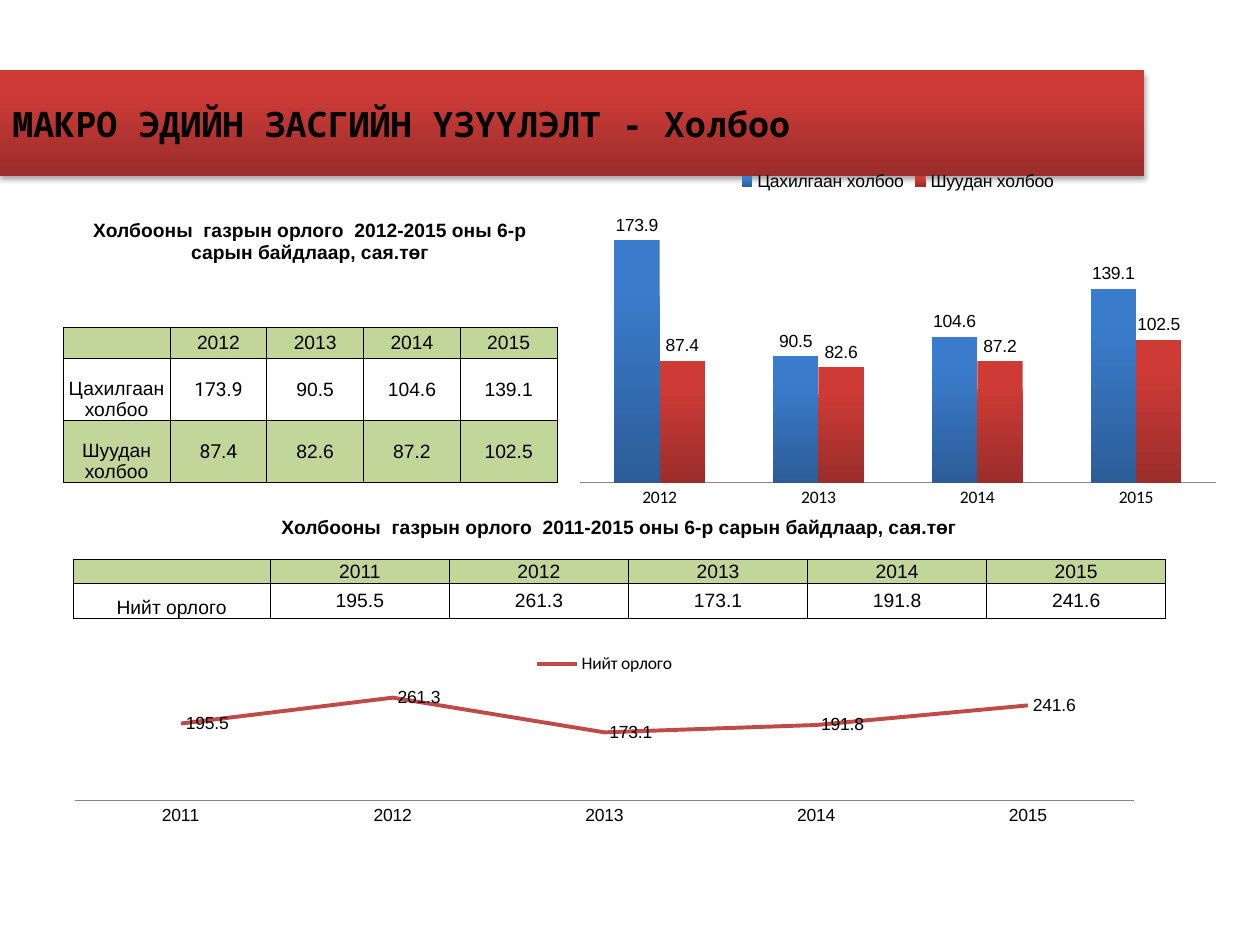
import pptx
import pptx.util
import pptx.chart.data
import pptx.dml.color
import pptx.enum.chart
import pptx.enum.shapes
import pptx.enum.text
import pptx.oxml
from lxml import etree
from pptx.oxml.ns import qn

Cm, Pt = pptx.util.Cm, pptx.util.Pt
Kind = pptx.enum.chart.XL_CHART_TYPE
Spot = pptx.enum.chart.XL_LABEL_POSITION
Anchor = pptx.enum.text.MSO_ANCHOR
Align = pptx.enum.text.PP_ALIGN

BLACK, GREEN, GREY = "000000", "C2D69A", "868686"
BLUES, REDS = ("3A7CCB", "2C5D98"), ("CE3B37", "9B2D2A")
PLAIN = "{2D5ABB26-0587-4C30-8999-92F81FD0307C}"
SIDES = ("lnL", "lnR", "lnT", "lnB")

YEARS = ["2011", "2012", "2013", "2014", "2015"]
SPLIT = {"Цахилгаан холбоо": [173.9, 90.5, 104.6, 139.1],
         "Шуудан холбоо": [87.4, 82.6, 87.2, 102.5]}
TOTAL = {"Нийт орлого": [195.5, 261.3, 173.1, 191.8, 241.6]}


def paint(hue):
    return pptx.dml.color.RGBColor.from_string(hue)


def shade(fill, hues):
    """Vertical gradient, light at the top."""
    fill.gradient()
    fill.gradient_angle = 270
    for stop, hue, place in zip(fill.gradient_stops, hues, (0.2, 1)):
        stop.color.rgb = paint(hue)
        stop.position = place


def style(font, size, name="Arial", bold=False):
    font.size, font.name, font.bold = Pt(size), name, bold
    font.color.rgb = paint(BLACK)


def banner(slide, text, x, y, w, h):
    box = slide.shapes.add_shape(
        pptx.enum.shapes.MSO_SHAPE.RECTANGLE, Cm(x), Cm(y), Cm(w), Cm(h))
    shade(box.fill, REDS)
    box.line.fill.background()
    # Soft shadow below
    box.shadow.inherit = False
    glow = etree.SubElement(
        box._element.spPr.find(qn("a:effectLst")), qn("a:outerShdw"),
        blurRad="40000", dist="23000", dir="5400000", rotWithShape="0")
    tint = etree.SubElement(glow, qn("a:srgbClr"), val=BLACK)
    etree.SubElement(tint, qn("a:alpha"), val="35000")
    frame = box.text_frame
    frame.word_wrap = True
    frame.vertical_anchor = Anchor.MIDDLE
    para = frame.paragraphs[0]
    para.text, para.alignment = text, Align.LEFT
    style(para.font, 20, "Noto Sans Mono", True)


def border(cell, sides):
    props = cell._tc.get_or_add_tcPr()
    for spot, side in enumerate(sides):
        line = etree.Element(qn("a:" + side), w="6350")
        fill = etree.SubElement(line, qn("a:solidFill"))
        etree.SubElement(fill, qn("a:srgbClr"), val=BLACK)
        props.insert(spot, line)


def write(cell, text, anchor, name="Arial", bold=False):
    cell.margin_left = cell.margin_right = 0
    cell.margin_top = cell.margin_bottom = 0
    cell.vertical_anchor = anchor
    para = cell.text_frame.paragraphs[0]
    para.alignment = Align.CENTER
    if text:
        para.text = text
        style(para.font, 11, name, bold)
    else:
        # Small end mark keeps empty rows low
        etree.SubElement(para._p, qn("a:endParaRPr"), sz="800")


def sheet(slide, title, years, data, x, y, cols, rows, first="Arial"):
    """Title row, empty rows, then the year row and one row per series."""
    head = len(rows) - len(data) - 1
    frame = slide.shapes.add_table(
        len(rows), len(cols), Cm(x), Cm(y), Cm(sum(cols)), Cm(sum(rows)))
    grid = frame.table
    grid.first_row = grid.horz_banding = False
    grid._tbl.tblPr.find(qn("a:tableStyleId")).text = PLAIN
    for col, wide in zip(grid.columns, cols):
        col.width = Cm(wide)
    for row, tall in zip(grid.rows, rows):
        row.height = Cm(tall)
    grid.cell(0, 0).merge(grid.cell(0, len(cols) - 1))
    write(grid.cell(0, 0), title, Anchor.BOTTOM, bold=True)
    # Empty rows
    for r in range(1, head):
        for c in range(len(cols)):
            write(grid.cell(r, c), "", Anchor.MIDDLE)
    # Years and values, every other row green
    body = [["", *years]] + [[name, *vals] for name, vals in data.items()]
    for r, line in enumerate(body):
        for c, item in enumerate(line):
            cell = grid.cell(head + r, c)
            write(cell, str(item), Anchor.MIDDLE if c else Anchor.BOTTOM,
                  first if r and c == 1 else "Arial")
            if r % 2 == 0:
                cell.fill.solid()
                cell.fill.fore_color.rgb = paint(GREEN)
            border(cell, SIDES)


def graph(slide, kind, years, data, x, y, w, h, spot, axis, key):
    """Chart with a top legend, value labels and no value axis."""
    feed = pptx.chart.data.CategoryChartData(number_format="0.0")
    feed.categories = years
    for name, vals in data.items():
        feed.add_series(name, vals)
    chart = slide.shapes.add_chart(
        kind, Cm(x), Cm(y), Cm(w), Cm(h), feed).chart
    style(chart.font, 10, "Calibri")
    chart.has_title = False
    chart.has_legend = True
    chart.legend.position = pptx.enum.chart.XL_LEGEND_POSITION.TOP
    chart.legend.include_in_layout = False
    style(chart.legend.font, 10, key)
    chart.value_axis.visible = False
    chart.value_axis.has_major_gridlines = False
    chart.value_axis.minimum_scale = 0
    base = chart.category_axis
    base.major_tick_mark = pptx.enum.chart.XL_TICK_MARK.NONE
    base.format.line.color.rgb = paint(GREY)
    style(base.tick_labels.font, 10, axis)
    plot = chart.plots[0]
    plot.vary_by_categories = False
    for run in plot.series:
        marks = run.data_labels
        marks.show_value = True
        marks.position = spot
        style(marks.font, 10)
    return plot


def bars(slide, x, y, w, h):
    plot = graph(slide, Kind.COLUMN_CLUSTERED, YEARS[1:], SPLIT, x, y, w, h,
                 Spot.OUTSIDE_END, "Calibri", "Arial")
    plot.gap_width, plot.overlap = 150, 0
    for run, hues in zip(plot.series, (BLUES, REDS)):
        shade(run.format.fill, hues)


def trend(slide, x, y, w, h):
    plot = graph(slide, Kind.LINE_STACKED, YEARS, TOTAL, x, y, w, h,
                 Spot.RIGHT, "Arial", "Calibri")
    run = plot.series[0]
    run.smooth = False
    run.marker.style = pptx.enum.chart.XL_MARKER_STYLE.NONE
    run.format.line.color.rgb = paint("BE4B48")
    run.format.line.width = Pt(2.25)


def main():
    deck = pptx.Presentation()
    deck.slide_width, deck.slide_height = Cm(25.4), Cm(19.05)
    slide = deck.slides.add_slide(deck.slide_layouts[6])
    banner(slide, "МАКРО ЭДИЙН ЗАСГИЙН ҮЗҮҮЛЭЛТ - Холбоо", 0, 1.42, 23.06, 2.12)
    # Income by branch
    sheet(slide, "Холбооны  газрын орлого  2012-2015 оны 6-р сарын байдлаар, сая.төг",
          YEARS[1:], SPLIT, 1.27, 4.01, [2.16] + [1.95] * 4,
          [1.3] + [0.64] * 3 + [1.25] * 2, "Roboto")
    bars(slide, 11.43, 3.18, 13.34, 7.19)
    # Total income
    sheet(slide, "Холбооны  газрын орлого  2011-2015 оны 6-р сарын байдлаар, сая.төг",
          YEARS, TOTAL, 1.47, 10.11, [3.98] + [3.61] * 5,
          [0.74, 0.43, 0.48, 0.71])
    trend(slide, 1.07, 12.9, 22.23, 3.81)
    deck.save("out.pptx")


if __name__ == "__main__":
    main()
